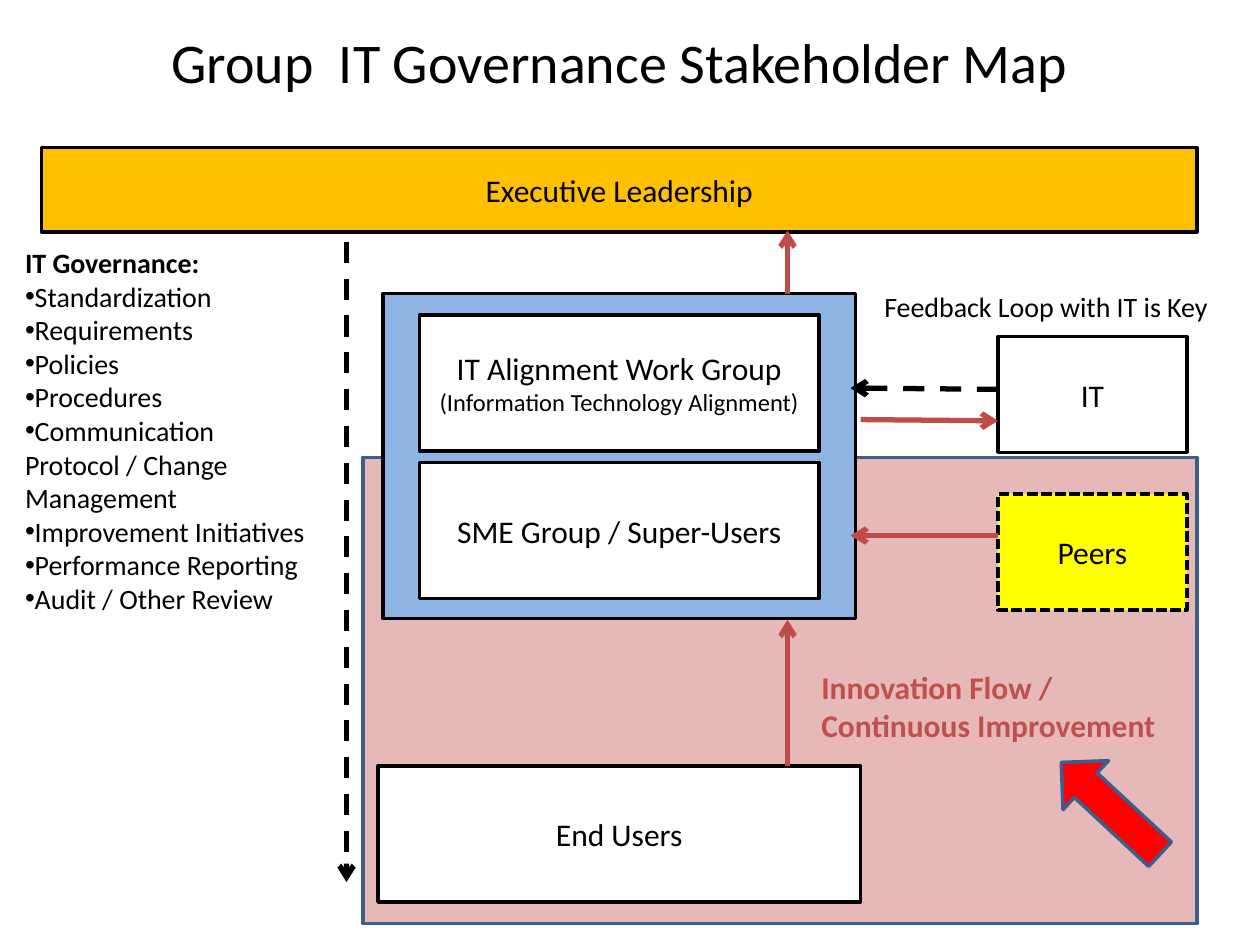
from lxml import etree
from pptx import Presentation
from pptx.dml.color import RGBColor
from pptx.enum import dml, shapes, text
from pptx.oxml import ns
from pptx.util import Inches, Pt

BLACK = RGBColor(0x00, 0x00, 0x00)
WHITE = RGBColor(0xFF, 0xFF, 0xFF)
GOLD = RGBColor(0xFF, 0xC0, 0x00)
YELLOW = RGBColor(0xFF, 0xFF, 0x00)
PINK = RGBColor(0xE6, 0xB9, 0xB8)
SKY = RGBColor(0x8E, 0xB4, 0xE3)
NAVY = RGBColor(0x3A, 0x5F, 0x8C)
BRICK = RGBColor(0xBF, 0x4C, 0x48)
ROSE = RGBColor(0xC0, 0x50, 0x4D)
RED = RGBColor(0xFF, 0x00, 0x00)
SHAPE = shapes.MSO_SHAPE
DASH = dml.MSO_LINE
ALIGN = text.PP_ALIGN


class Map:
    """Style and current slide of the stakeholder map."""
    font = "Calibri"

    def __init__(self, slide):
        self.slide = slide

    def run(self, para, words, size, color=BLACK, bold=False):
        run = para.add_run()
        run.text = words
        font = run.font
        font.name, font.size, font.bold = self.font, Pt(size), bold
        font.color.rgb = color

    def box(self, place, fill=WHITE, runs=(), line=BLACK, dash=None,
            kind=SHAPE.RECTANGLE, turn=0):
        box = self.slide.shapes.add_shape(kind, *map(Inches, place))
        box.shadow.inherit = False
        box.rotation = turn
        if fill is None:
            box.fill.background()
        else:
            box.fill.solid()
            box.fill.fore_color.rgb = fill
        box.line.color.rgb = line
        box.line.width = Pt(2)
        if dash:
            box.line.dash_style = dash
        frame = box.text_frame
        frame.word_wrap = True
        frame.vertical_anchor = text.MSO_ANCHOR.MIDDLE
        para = frame.paragraphs[0]
        para.alignment = ALIGN.CENTER
        for words, size in runs:
            self.run(para, words, size)

    def label(self, place, words, size, color=BLACK, bold=False,
              align=ALIGN.LEFT):
        area = self.slide.shapes.add_textbox(*map(Inches, place))
        frame = area.text_frame
        frame.word_wrap = True
        para = frame.paragraphs[0]
        para.alignment = align
        self.run(para, words, size, color, bold)
        return frame

    def bullet(self, frame, words, size):
        para = frame.add_paragraph()
        props = para._p.get_or_add_pPr()
        props.set("marL", "0")
        props.set("indent", "0")
        etree.SubElement(props, ns.qn("a:buFont"), typeface="Arial")
        etree.SubElement(props, ns.qn("a:buChar"), char="•")
        self.run(para, words, size)

    def arrow(self, start, end, color=BRICK, dash=None):
        link = self.slide.shapes.add_connector(
            shapes.MSO_CONNECTOR.STRAIGHT, *map(Inches, start + end))
        link.line.color.rgb = color
        link.line.width = Pt(3)
        if dash:
            link.line.dash_style = dash
        stroke = link.line._get_or_add_ln()
        etree.SubElement(stroke, ns.qn("a:tailEnd"), type="arrow")
        etree.SubElement(link._element.spPr, ns.qn("a:effectLst"))


def main():
    deck = Presentation()
    deck.slide_width, deck.slide_height = Inches(10), Inches(7.5)
    chart = Map(deck.slides.add_slide(deck.slide_layouts[6]))

    # Background zones
    chart.box((2.88, 3.63, 6.62, 3.7), PINK, line=NAVY)
    chart.box((3.04, 2.33, 3.75, 2.58), SKY)

    # Title
    chart.label((1.17, 0.17, 7.5, 0.75), "Group  IT Governance Stakeholder Map",
                32, align=ALIGN.CENTER)

    # Stakeholders
    chart.box((0.33, 1.17, 9.17, 0.67), GOLD, [("Executive Leadership", 18)])
    chart.box((3.33, 2.5, 3.17, 1.08), runs=[
        ("IT Alignment Work Group ", 18),
        ("(Information Technology Alignment)", 14)])
    chart.box((3.33, 3.67, 3.17, 1.08), runs=[("SME Group / Super-Users", 18)])
    chart.box((3, 6.08, 3.83, 1.08), runs=[("End Users", 18)])
    chart.box((7.92, 2.67, 1.5, 0.92), None, [("IT", 18)])
    chart.box((7.92, 3.92, 1.5, 0.92), YELLOW, [("Peers", 18)],
              dash=DASH.SQUARE_DOT)

    # Innovation flow
    for start, end in [((6.25, 6.08), (6.25, 4.92)),
                       ((7.92, 4.25), (6.75, 4.25)),
                       ((6.25, 2.33), (6.25, 1.83)),
                       ((6.83, 3.33), (7.92, 3.34))]:
        chart.arrow(start, end)

    # Governance and feedback flow
    chart.arrow((2.75, 1.92), (2.75, 7), BLACK, DASH.DASH)
    chart.arrow((7.92, 3.09), (6.75, 3.08), BLACK, DASH.DASH)

    # Governance duties
    duties = chart.label((0.1, 1.9, 2.58, 3.06), "IT Governance:", 16,
                         bold=True)
    for duty in ("Standardization", "Requirements", "Policies", "Procedures",
                 "Communication Protocol / Change Management",
                 "Improvement Initiatives", "Performance Reporting",
                 "Audit / Other Review"):
        chart.bullet(duties, duty, 16)

    # Captions
    chart.label((6.42, 5.25, 3.08, 0.71),
                "Innovation Flow / Continuous Improvement", 18, ROSE, True)
    chart.label((6.92, 2.25, 3.25, 0.37), "Feedback Loop with IT is Key", 16)

    # Direction of improvement
    chart.box((8.28, 6.15, 1.07, 0.53), RED, line=NAVY,
              kind=SHAPE.RIGHT_ARROW, turn=222.9)

    deck.save("out.pptx")


if __name__ == "__main__":
    main()
